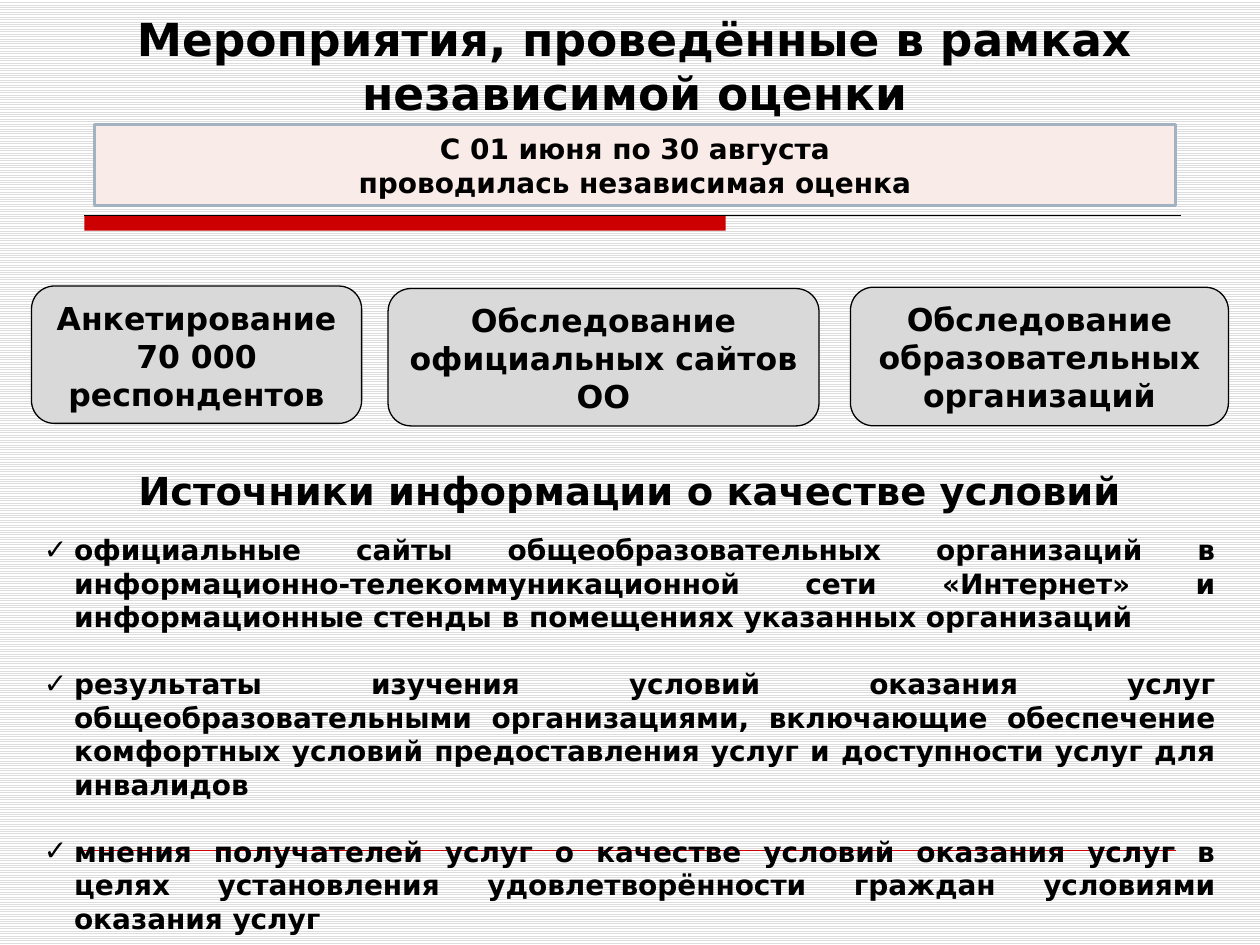
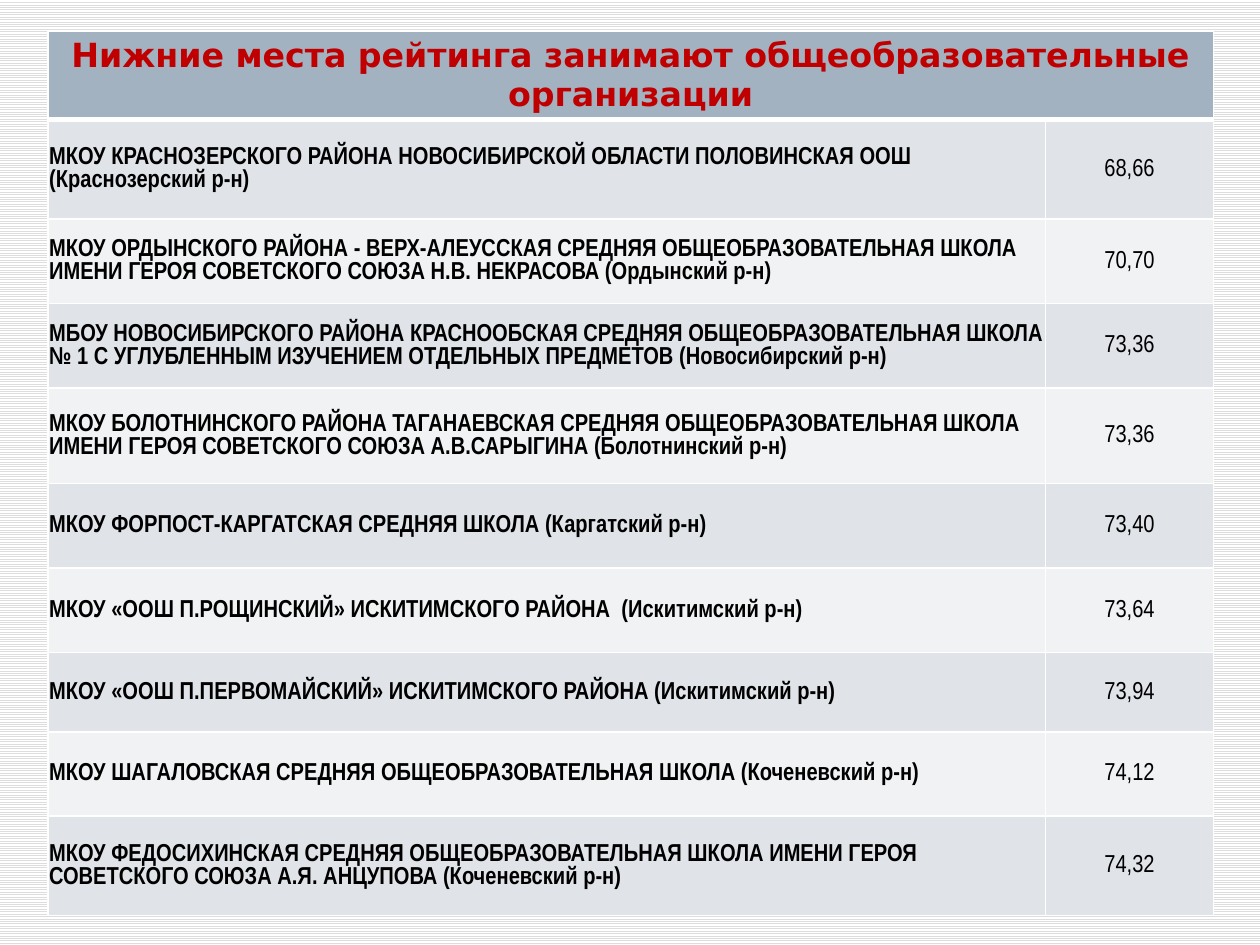
from lxml import etree
from pptx import Presentation
from pptx.dml.color import RGBColor
from pptx.enum.dml import MSO_PATTERN
from pptx.enum.shapes import MSO_CONNECTOR, MSO_SHAPE
from pptx.enum.text import MSO_ANCHOR, PP_ALIGN
from pptx.oxml.ns import qn
from pptx.util import Inches, Pt

BLACK = RGBColor(0x00, 0x00, 0x00)
WHITE = RGBColor(0xFF, 0xFF, 0xFF)
STRIPE = RGBColor(0xDD, 0xDD, 0xDD)
RED = RGBColor(0xCC, 0x00, 0x00)
HEADING_RED = RGBColor(0xC0, 0x00, 0x00)
GREY = RGBColor(0xD9, 0xD9, 0xD9)
PINK = RGBColor(0xF9, 0xEB, 0xE7)
STEEL = RGBColor(0xA3, 0xB2, 0xC1)
ROW_DARK = RGBColor(0xE0, 0xE4, 0xE9)
ROW_LIGHT = RGBColor(0xF0, 0xF2, 0xF4)

FONT = "DejaVu Sans"
TABLE_FONT = "Arial Narrow"
CENTER, JUSTIFY, LEFT = PP_ALIGN.CENTER, PP_ALIGN.JUSTIFY, PP_ALIGN.LEFT
TOP, MIDDLE, BOTTOM = MSO_ANCHOR.TOP, MSO_ANCHOR.MIDDLE, MSO_ANCHOR.BOTTOM
RECTANGLE, ROUNDED = MSO_SHAPE.RECTANGLE, MSO_SHAPE.ROUNDED_RECTANGLE
STRAIGHT = MSO_CONNECTOR.STRAIGHT
LIGHT_HORIZONTAL = MSO_PATTERN.LIGHT_HORIZONTAL

ACTIVITIES = [
    ((0.25, 2.27, 2.62, 1.09), "Анкетирование\n70 000 респондентов"),
    ((3.08, 2.29, 3.42, 1.09), "Обследование официальных сайтов\nОО"),
    ((6.75, 2.28, 3, 1.1), "Обследование образовательных организаций"),
]
SOURCES = [
    "официальные сайты общеобразовательных организаций в "
    "информационно-телекоммуникационной сети «Интернет» и "
    "информационные стенды в помещениях указанных организаций",
    "результаты изучения условий оказания услуг общеобразовательными "
    "организациями, включающие обеспечение комфортных условий "
    "предоставления услуг и доступности услуг для инвалидов",
    "мнения получателей услуг о качестве условий оказания услуг в целях "
    "установления удовлетворённости граждан условиями оказания услуг",
]
# Row height, school, score
RATING = [
    (0.79, "МКОУ КРАСНОЗЕРСКОГО РАЙОНА НОВОСИБИРСКОЙ ОБЛАСТИ ПОЛОВИНСКАЯ ООШ "
           "(Краснозерский р-н)", "68,66"),
    (0.67, "МКОУ ОРДЫНСКОГО РАЙОНА - ВЕРХ-АЛЕУССКАЯ СРЕДНЯЯ ОБЩЕОБРАЗОВАТЕЛЬНАЯ "
           "ШКОЛА ИМЕНИ ГЕРОЯ СОВЕТСКОГО СОЮЗА Н.В. НЕКРАСОВА (Ордынский р-н)",
     "70,70"),
    (0.67, "МБОУ НОВОСИБИРСКОГО РАЙОНА КРАСНООБСКАЯ СРЕДНЯЯ ОБЩЕОБРАЗОВАТЕЛЬНАЯ "
           "ШКОЛА № 1 С УГЛУБЛЕННЫМ ИЗУЧЕНИЕМ ОТДЕЛЬНЫХ ПРЕДМЕТОВ "
           "(Новосибирский р-н)", "73,36"),
    (0.76, "МКОУ БОЛОТНИНСКОГО РАЙОНА ТАГАНАЕВСКАЯ СРЕДНЯЯ ОБЩЕОБРАЗОВАТЕЛЬНАЯ "
           "ШКОЛА ИМЕНИ ГЕРОЯ СОВЕТСКОГО СОЮЗА А.В.САРЫГИНА (Болотнинский р-н)",
     "73,36"),
    (0.67, "МКОУ ФОРПОСТ-КАРГАТСКАЯ СРЕДНЯЯ ШКОЛА (Каргатский р-н)", "73,40"),
    (0.67, "МКОУ «ООШ П.РОЩИНСКИЙ» ИСКИТИМСКОГО РАЙОНА  (Искитимский р-н)",
     "73,64"),
    (0.63, "МКОУ «ООШ П.ПЕРВОМАЙСКИЙ» ИСКИТИМСКОГО РАЙОНА (Искитимский р-н)",
     "73,94"),
    (0.67, "МКОУ ШАГАЛОВСКАЯ СРЕДНЯЯ ОБЩЕОБРАЗОВАТЕЛЬНАЯ ШКОЛА (Коченевский р-н)",
     "74,12"),
    (0.79, "МКОУ ФЕДОСИХИНСКАЯ СРЕДНЯЯ ОБЩЕОБРАЗОВАТЕЛЬНАЯ ШКОЛА ИМЕНИ ГЕРОЯ "
           "СОВЕТСКОГО СОЮЗА А.Я. АНЦУПОВА (Коченевский р-н)", "74,32"),
]


def inches(box):
    return [Inches(length) for length in box]


def write(frame, text, size, align=CENTER, color=BLACK, font=FONT, bold=True):
    frame.text = text
    for paragraph in frame.paragraphs:
        paragraph.alignment = align
        for run in paragraph.runs:
            run.font.size = Pt(size)
            run.font.name = font
            run.font.bold = bold
            run.font.color.rgb = color


def add_text(slide, box, text, size, align=CENTER, anchor=TOP, wrap=True):
    frame = slide.shapes.add_textbox(*inches(box)).text_frame
    frame.word_wrap = wrap
    frame.vertical_anchor = anchor
    write(frame, text, size, align)
    return frame


def add_panel(slide, box, kind, fill, line=None, width=0.75):
    panel = slide.shapes.add_shape(kind, *inches(box))
    panel.shadow.inherit = False
    panel.fill.solid()
    panel.fill.fore_color.rgb = fill
    if line is None:
        panel.line.fill.background()
    else:
        panel.line.color.rgb = line
        panel.line.width = Pt(width)
    return panel


def add_rule(slide, left, right, y, color, width):
    """Draw a thin horizontal line."""
    rule = slide.shapes.add_connector(STRAIGHT, *inches((left, y, right, y)))
    rule.line.color.rgb = color
    rule.line.width = Pt(width)
    etree.SubElement(rule._element.spPr, qn("a:effectLst"))


def add_base_slide(prs):
    """Add a blank slide with the shared red band and rules."""
    slide = prs.slides.add_slide(prs.slide_layouts[6])
    fill = slide.background.fill
    fill.patterned()
    fill.pattern = LIGHT_HORIZONTAL
    fill.fore_color.rgb = STRIPE
    fill.back_color.rgb = WHITE
    add_panel(slide, (0.67, 1.71, 5.09, 0.12), RECTANGLE, RED)
    add_rule(slide, 0.67, 9.37, 1.71, BLACK, 0.75)
    add_rule(slide, 0.67, 9.33, 6.75, RED, 0.25)
    return slide


def add_sources(slide, box):
    frame = add_text(slide, box, "\n".join(SOURCES), 16, JUSTIFY)
    for paragraph in frame.paragraphs:
        if paragraph.text != SOURCES[-1]:
            paragraph.space_after = Pt(19)
        properties = paragraph._p.get_or_add_pPr()
        properties.set("marL", str(Inches(0.24)))
        properties.set("indent", str(-Inches(0.24)))
        etree.SubElement(properties, qn("a:buFont"), typeface=FONT)
        etree.SubElement(properties, qn("a:buChar"), char="✓")


def build_activities_slide(prs):
    slide = add_base_slide(prs)
    for box, activity in ACTIVITIES:
        panel = add_panel(slide, box, ROUNDED, GREY, BLACK)
        panel.text_frame.word_wrap = True
        panel.text_frame.vertical_anchor = TOP
        write(panel.text_frame, activity, 18)
    add_sources(slide, (0.25, 4.18, 9.5, 3.3))
    add_text(slide, (0.89, 3.65, 8.21, 0.47),
             "Источники информации о качестве условий", 22,
             anchor=BOTTOM, wrap=False)
    add_text(slide, (0.33, 0.5, 9.42, 0.5),
             "Мероприятия, проведённые в рамках независимой оценки", 26,
             anchor=BOTTOM)
    period = add_panel(slide, (0.75, 0.99, 8.58, 0.64), RECTANGLE, PINK, STEEL, 2)
    period.text_frame.vertical_anchor = BOTTOM
    write(period.text_frame,
          "С 01 июня по 30 августа\nпроводилась независимая оценка", 16)


def style_cell(cell, fill, margins, top=1, bottom=1):
    """Set fill, margins (left, top, right, bottom) and white borders."""
    cell.vertical_anchor = MIDDLE
    (cell.margin_left, cell.margin_top,
     cell.margin_right, cell.margin_bottom) = inches(margins)
    cell.fill.solid()
    cell.fill.fore_color.rgb = fill
    properties = cell._tc.get_or_add_tcPr()
    borders = (("a:lnL", 1), ("a:lnR", 1), ("a:lnT", top), ("a:lnB", bottom))
    for index, (side, width) in enumerate(borders):
        border = etree.Element(qn(side), w=str(Pt(width)))
        solid = etree.SubElement(border, qn("a:solidFill"))
        etree.SubElement(solid, qn("a:srgbClr"), val=str(WHITE))
        properties.insert(index, border)


def build_rating_slide(prs):
    slide = add_base_slide(prs)
    table = slide.shapes.add_table(len(RATING) + 1, 2,
                                   *inches((0.38, 0.25, 9.25, 7.01))).table
    table.first_row = False
    table.horz_banding = False
    for column, width in zip(table.columns, (7.92, 1.33)):
        column.width = Inches(width)

    table.rows[0].height = Inches(0.7)
    heading = table.cell(0, 0)
    heading.merge(table.cell(0, 1))
    for cell in table.rows[0].cells:
        style_cell(cell, STEEL, (0.07, 0, 0.07, 0), bottom=3)
    write(heading.text_frame,
          "Нижние места рейтинга занимают общеобразовательные организации",
          19, color=HEADING_RED)

    for index, (height, school, score) in enumerate(RATING, 1):
        table.rows[index].height = Inches(height)
        fill = ROW_DARK if index % 2 else ROW_LIGHT
        columns = ((school, LEFT, True), (score, CENTER, False))
        for cell, (text, align, bold) in zip(table.rows[index].cells, columns):
            style_cell(cell, fill, (0.01, 0.01, 0.01, 0),
                       top=3 if index == 1 else 1)
            write(cell.text_frame, text, 14, align, font=TABLE_FONT, bold=bold)


def main():
    prs = Presentation()
    prs.slide_width, prs.slide_height = Inches(10), Inches(7.5)
    build_activities_slide(prs)
    build_rating_slide(prs)
    prs.save("out.pptx")


if __name__ == "__main__":
    main()
